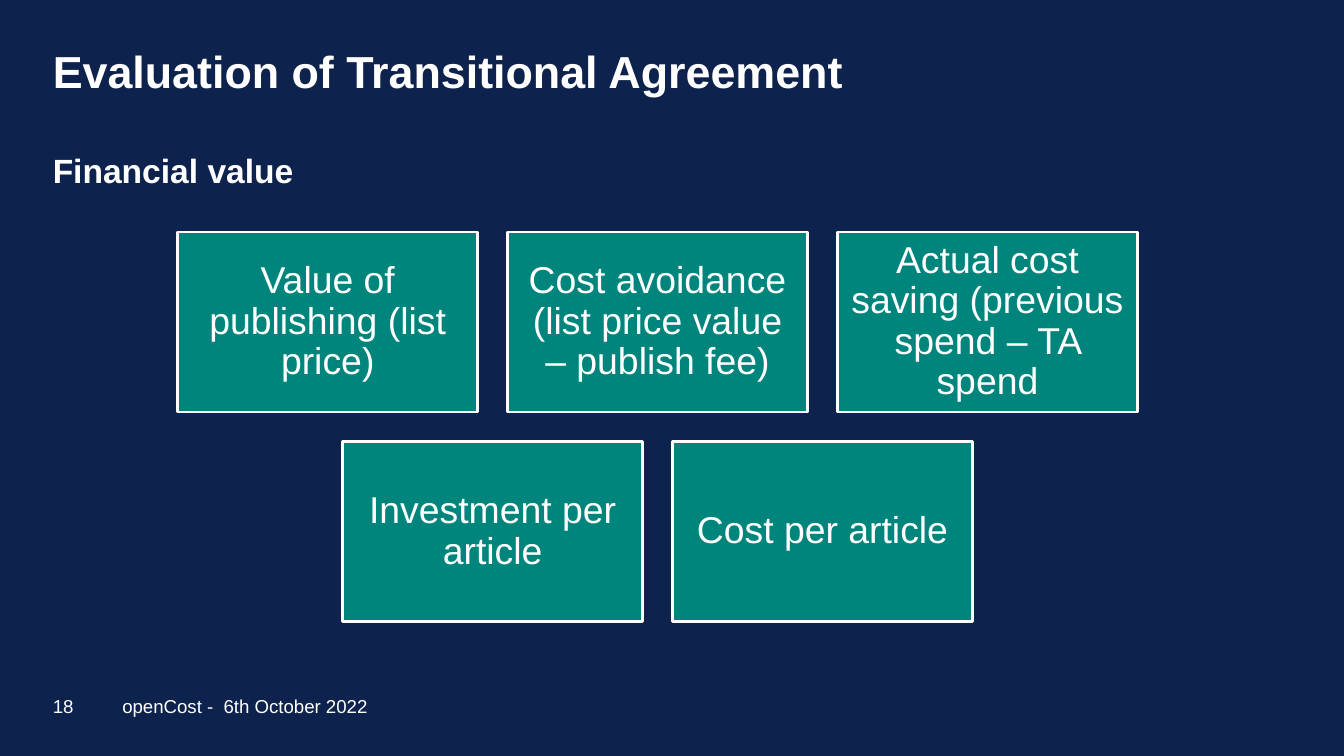
from pptx import Presentation
from pptx.dml.color import RGBColor
from pptx.enum import shapes, text
from pptx.util import Pt

NAVY = RGBColor(0x0D, 0x22, 0x4C)
TEAL = RGBColor(0x00, 0x85, 0x7D)
WHITE = RGBColor(0xFF, 0xFF, 0xFF)

CARD_ROWS = [
    ["Value of publishing (list price)",
     "Cost avoidance (list price value – publish fee)",
     "Actual cost saving (previous spend – TA spend"],
    ["Investment per article", "Cost per article"],
]
CARD_WIDTH, CARD_HEIGHT, CARD_GAP = 160.8, 96.5, 15.9


def write(shape, wording, size, bold=False, margin=0, line_spacing=None,
          anchor=text.MSO_ANCHOR.TOP, align=text.PP_ALIGN.LEFT):
    frame = shape.text_frame
    frame.word_wrap = True
    frame.auto_size = text.MSO_AUTO_SIZE.NONE
    frame.vertical_anchor = anchor
    frame.margin_left = frame.margin_right = Pt(margin)
    frame.margin_top = frame.margin_bottom = Pt(margin)
    para = frame.paragraphs[0]
    para.text = wording
    para.alignment = align
    if line_spacing:
        para.line_spacing = line_spacing
    para.font.name = "Arial"
    para.font.size = Pt(size)
    para.font.bold = bold
    para.font.color.rgb = WHITE


def add_heading(page, left, top, width):
    # Title
    title = page.shapes.title
    title.left, title.top = Pt(left), Pt(top)
    title.width, title.height = Pt(width), Pt(26.6)
    write(title, "Evaluation of Transitional Agreement", 24, bold=True,
          line_spacing=0.9)
    # Subtitle
    subtitle = page.shapes.add_textbox(Pt(left), Pt(top + 56.2), Pt(width), Pt(20))
    write(subtitle, "Financial value", 18, bold=True, line_spacing=0.9)


def add_cards(page, left, top, width):
    for row, labels in enumerate(CARD_ROWS):
        # Each row is centred in the width
        row_width = len(labels) * (CARD_WIDTH + CARD_GAP) - CARD_GAP
        row_left = left + (width - row_width) / 2
        card_top = top + row * (CARD_HEIGHT + CARD_GAP)
        for column, label in enumerate(labels):
            card_left = row_left + column * (CARD_WIDTH + CARD_GAP)
            card = page.shapes.add_shape(
                shapes.MSO_SHAPE.RECTANGLE, Pt(card_left), Pt(card_top),
                Pt(CARD_WIDTH), Pt(CARD_HEIGHT))
            card.shadow.inherit = False
            card.fill.solid()
            card.fill.fore_color.rgb = TEAL
            card.line.color.rgb = WHITE
            card.line.width = Pt(1.5)
            write(card, label, 20, margin=6, line_spacing=0.9,
                  anchor=text.MSO_ANCHOR.MIDDLE, align=text.PP_ALIGN.CENTER)


def add_footer(page, left, top, height):
    # Page number, then event and date
    for offset, width, wording in [(0, 16, "18"),
                                   (37.2, 286.6, "openCost -  6th October 2022")]:
        box = page.shapes.add_textbox(Pt(left + offset), Pt(top), Pt(width), Pt(height))
        write(box, wording, 10, anchor=text.MSO_ANCHOR.MIDDLE)


def main():
    deck = Presentation()
    deck.slide_width, deck.slide_height = Pt(720), Pt(405)
    page = deck.slides.add_slide(deck.slide_layouts[5])
    page.background.fill.solid()
    page.background.fill.fore_color.rgb = NAVY

    add_heading(page, left=28.3, top=26.6, width=513.4)
    add_cards(page, left=95.2, top=124.3, width=514.2)
    add_footer(page, left=28.3, top=364.5, height=28)
    deck.save("out.pptx")


if __name__ == "__main__":
    main()
